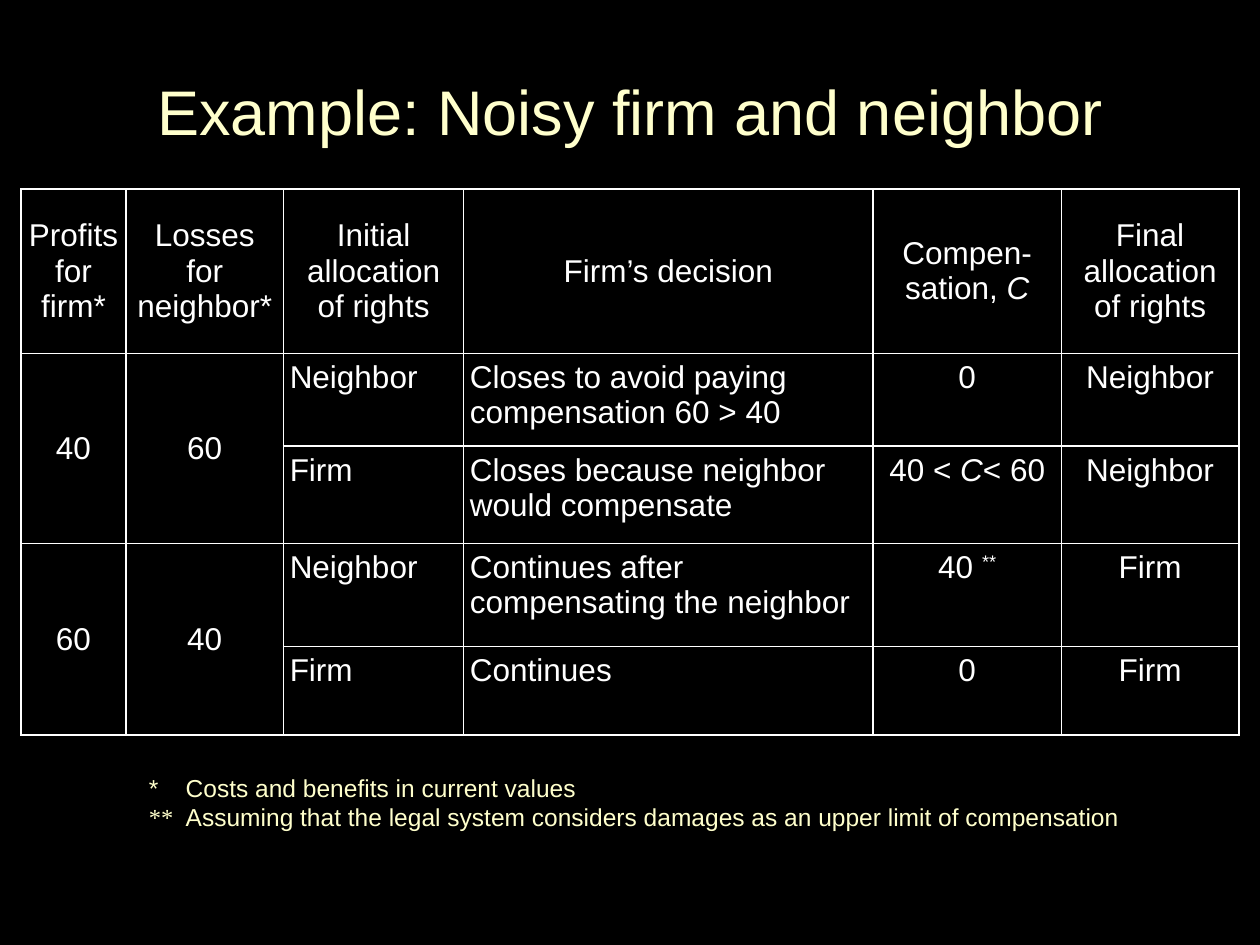
"""Build a slide with a table on rights allocation between a noisy firm and its neighbor."""
from lxml import etree
from pptx import Presentation
from pptx.dml.color import RGBColor
from pptx.enum.text import MSO_ANCHOR, PP_ALIGN
from pptx.oxml import parse_xml
from pptx.oxml.ns import nsdecls, qn
from pptx.util import Pt

BLACK = RGBColor(0x00, 0x00, 0x00)
WHITE = RGBColor(0xFF, 0xFF, 0xFF)
CREAM = RGBColor(0xFF, 0xFF, 0xCC)

COLS = [60, 90, 103, 234, 107.5, 101.5]
ROWS = [94, 53, 55.5, 59, 50.5]
CELLS = [
    ["Profits for firm*", "Losses for neighbor*", "Initial allocation of rights",
     "Firm’s decision", ["Compen-sation, ", "C"], "Final allocation of rights"],
    ["40", "60", "Neighbor", "Closes to avoid paying compensation 60 > 40", "0", "Neighbor"],
    ["", "", "Firm", "Closes because neighbor would compensate", ["40 < ", "C", "< 60"], "Neighbor"],
    ["60", "40", "Neighbor", "Continues after compensating the neighbor", ["40 ", "**"], "Firm"],
    ["", "", "Firm", "Continues", "0", "Firm"],
]
NOTES = [
    ("*", "Arial", "Costs and benefits in current values"),
    ("**", "Times New Roman",
     "Assuming that the legal system considers damages as an upper limit of compensation"),
]


def add_run(p, text, size, color, font="Arial"):
    r = p.add_run()
    r.text = text
    r.font.name = font
    r.font.size = Pt(size)
    r.font.color.rgb = color
    return r


def add_borders(cell):
    tcPr = cell._tc.get_or_add_tcPr()
    for side in ("lnL", "lnR", "lnT", "lnB"):
        tcPr.append(parse_xml(
            f'<a:{side} {nsdecls("a")} w="{Pt(1)}"><a:solidFill>'
            f'<a:srgbClr val="{WHITE}"/></a:solidFill></a:{side}>'))


prs = Presentation()
prs.slide_width, prs.slide_height = Pt(720), Pt(540)
s = prs.slides.add_slide(prs.slide_layouts[5])
s.background.fill.solid()
s.background.fill.fore_color.rgb = BLACK

title = s.shapes.title
title.left, title.top, title.width, title.height = Pt(54), Pt(18), Pt(612), Pt(90)
title.text_frame.vertical_anchor = MSO_ANCHOR.MIDDLE
p = title.text_frame.paragraphs[0]
p.alignment = PP_ALIGN.CENTER
add_run(p, "Example: Noisy firm and neighbor", 36, CREAM)

table = s.shapes.add_table(len(ROWS), len(COLS), Pt(12), Pt(108),
                           Pt(sum(COLS)), Pt(sum(ROWS))).table
table.first_row = table.horz_banding = False
for col, width in zip(table.columns, COLS):
    col.width = Pt(width)
for row, height in zip(table.rows, ROWS):
    row.height = Pt(height)
for top in (1, 3):
    for c in (0, 1):
        table.cell(top, c).merge(table.cell(top + 1, c))

for i, row in enumerate(CELLS):
    for j, content in enumerate(row):
        cell = table.cell(i, j)
        add_borders(cell)
        cell.fill.background()
        cell.margin_left = cell.margin_right = cell.margin_top = cell.margin_bottom = Pt(3.6)
        cell.vertical_anchor = MSO_ANCHOR.MIDDLE if i == 0 or j < 2 else MSO_ANCHOR.TOP
        if not content:
            continue
        p = cell.text_frame.paragraphs[0]
        p.alignment = PP_ALIGN.LEFT if i > 0 and j in (2, 3) else PP_ALIGN.CENTER
        for text in [content] if isinstance(content, str) else content:
            r = add_run(p, text, 18, WHITE)
            if text == "C":
                r.font.italic = True
            elif text == "**":
                r._r.get_or_add_rPr().set("baseline", "30000")

notes = s.shapes.add_textbox(Pt(78), Pt(438), Pt(580), Pt(41))
tf = notes.text_frame
tf.word_wrap = True
for k, (mark, font, text) in enumerate(NOTES):
    p = tf.paragraphs[0] if k == 0 else tf.add_paragraph()
    pPr = p._p.get_or_add_pPr()
    pPr.set("marL", str(Pt(21)))
    pPr.set("indent", str(Pt(-21)))
    tabs = etree.SubElement(pPr, qn("a:tabLst"))
    etree.SubElement(tabs, qn("a:tab"), pos=str(Pt(21)), algn="l")
    add_run(p, mark, 14, CREAM, font)
    add_run(p, "\t" + text, 14, CREAM)

prs.save("out.pptx")
